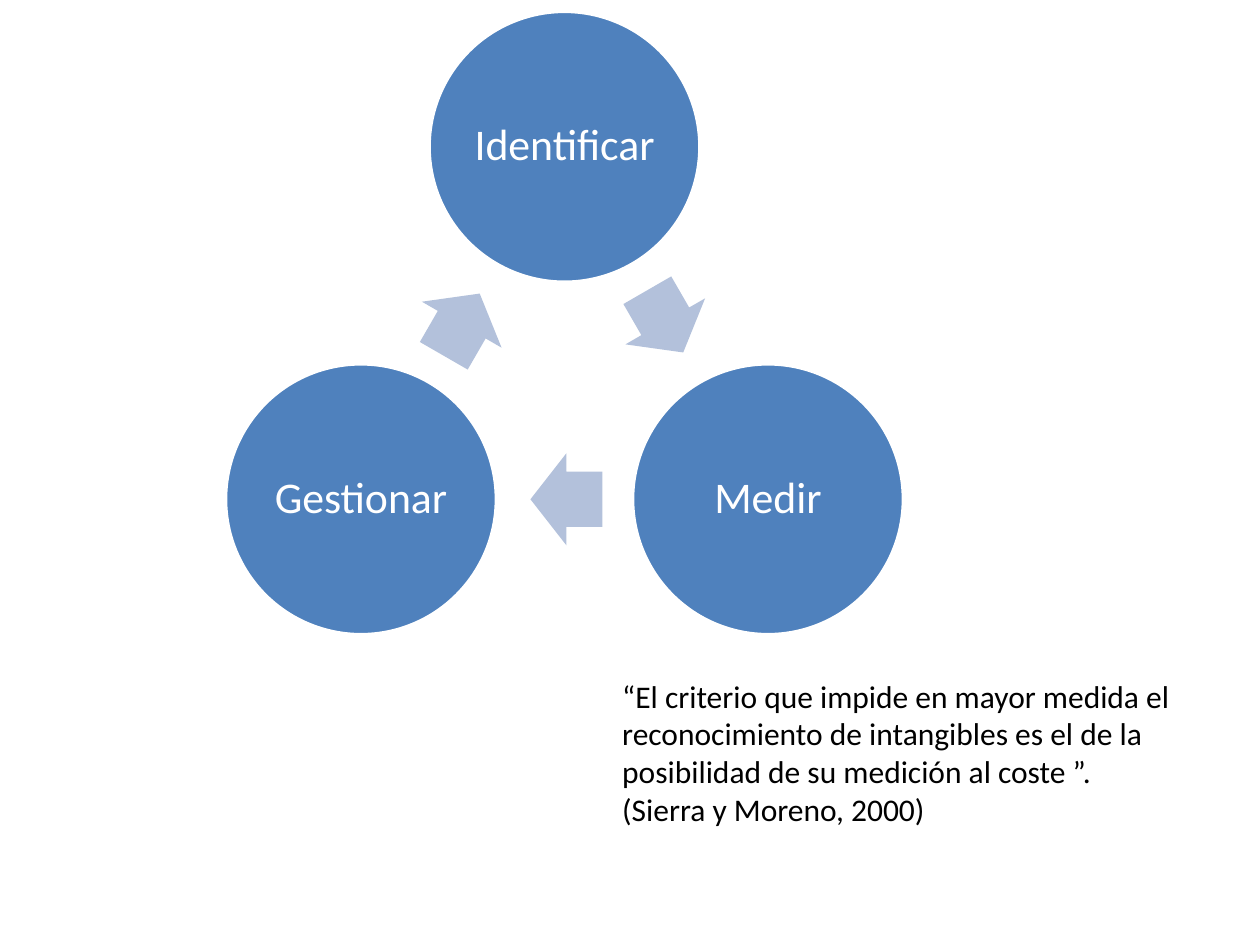
from math import cos, radians, sin

from pptx import Presentation
from pptx.dml.color import RGBColor
from pptx.enum.shapes import MSO_SHAPE
from pptx.enum.text import MSO_ANCHOR, PP_ALIGN
from pptx.util import Inches, Pt

STEPS = ["Identificar", "Medir", "Gestionar"]
QUOTE = ("“El criterio que impide en mayor medida el reconocimiento de intangibles "
         "es el de la posibilidad de su medición al coste ”. (Sierra y Moreno, 2000)")
COLORS = {"circle": "4F81BD", "arrow": "B3C1DB", "white": "FFFFFF", "black": "000000"}

CENTER_X, CENTER_Y = 4.48, 3.03
CYCLE_RADIUS = 1.865
CIRCLE_SIZE = 2.15
ARROW_WIDTH, ARROW_HEIGHT = 0.57, 0.73
ARROW_SETBACK = 0.015  # arrows sit slightly nearer the circle they leave


def color(name):
    return RGBColor.from_string(COLORS[name])


def write_text(shape, text, *, size, font_color, align=PP_ALIGN.LEFT,
               anchor=MSO_ANCHOR.TOP, line_spacing=None, inset=None):
    frame = shape.text_frame
    frame.word_wrap = True
    frame.vertical_anchor = anchor
    if inset is not None:
        frame.margin_left = frame.margin_right = Inches(inset)
        frame.margin_top = frame.margin_bottom = Inches(inset)
    paragraph = frame.paragraphs[0]
    paragraph.alignment = align
    paragraph.line_spacing = line_spacing
    run = paragraph.add_run()
    run.text = text
    run.font.name = "Calibri"
    run.font.size = Pt(size)
    run.font.color.rgb = color(font_color)


def add_centered(slide, kind, x, y, width, height, fill):
    """Add a filled, borderless preset shape centred on (x, y)."""
    shape = slide.shapes.add_shape(kind, Inches(x - width / 2), Inches(y - height / 2),
                                   Inches(width), Inches(height))
    shape.shadow.inherit = False
    shape.fill.solid()
    shape.fill.fore_color.rgb = color(fill)
    shape.line.fill.background()
    return shape


def cycle_point(angle, radius):
    """Return the point at a clockwise angle from the top of the cycle."""
    return (CENTER_X + radius * sin(radians(angle)),
            CENTER_Y - radius * cos(radians(angle)))


def add_step(slide, label, angle):
    circle = add_centered(slide, MSO_SHAPE.OVAL, *cycle_point(angle, CYCLE_RADIUS),
                          CIRCLE_SIZE, CIRCLE_SIZE, "circle")
    circle.line.color.rgb = color("white")
    circle.line.width = Pt(2)
    write_text(circle, label, size=25, font_color="white", align=PP_ALIGN.CENTER,
               anchor=MSO_ANCHOR.MIDDLE, line_spacing=0.9, inset=0.03)


def add_arrow(slide, angle, half_step):
    x, y = cycle_point(angle, CYCLE_RADIUS * cos(radians(half_step)))
    x -= ARROW_SETBACK * cos(radians(angle))
    y -= ARROW_SETBACK * sin(radians(angle))
    arrow = add_centered(slide, MSO_SHAPE.RIGHT_ARROW, x, y,
                         ARROW_WIDTH, ARROW_HEIGHT, "arrow")
    arrow.adjustments[0] = 0.6
    arrow.adjustments[1] = 0.5
    arrow.rotation = angle


def main():
    presentation = Presentation()
    presentation.slide_width, presentation.slide_height = Inches(10), Inches(7.5)
    slide = presentation.slides.add_slide(presentation.slide_layouts[6])

    step_angle = 360 / len(STEPS)
    for index, label in enumerate(STEPS):
        angle = index * step_angle
        add_step(slide, label, angle)
        add_arrow(slide, angle + step_angle / 2, step_angle / 2)

    quote = slide.shapes.add_textbox(Inches(4.84), Inches(5.32), Inches(4.57), Inches(1.31))
    write_text(quote, QUOTE, size=18, font_color="black")
    presentation.save("out.pptx")


if __name__ == "__main__":
    main()
